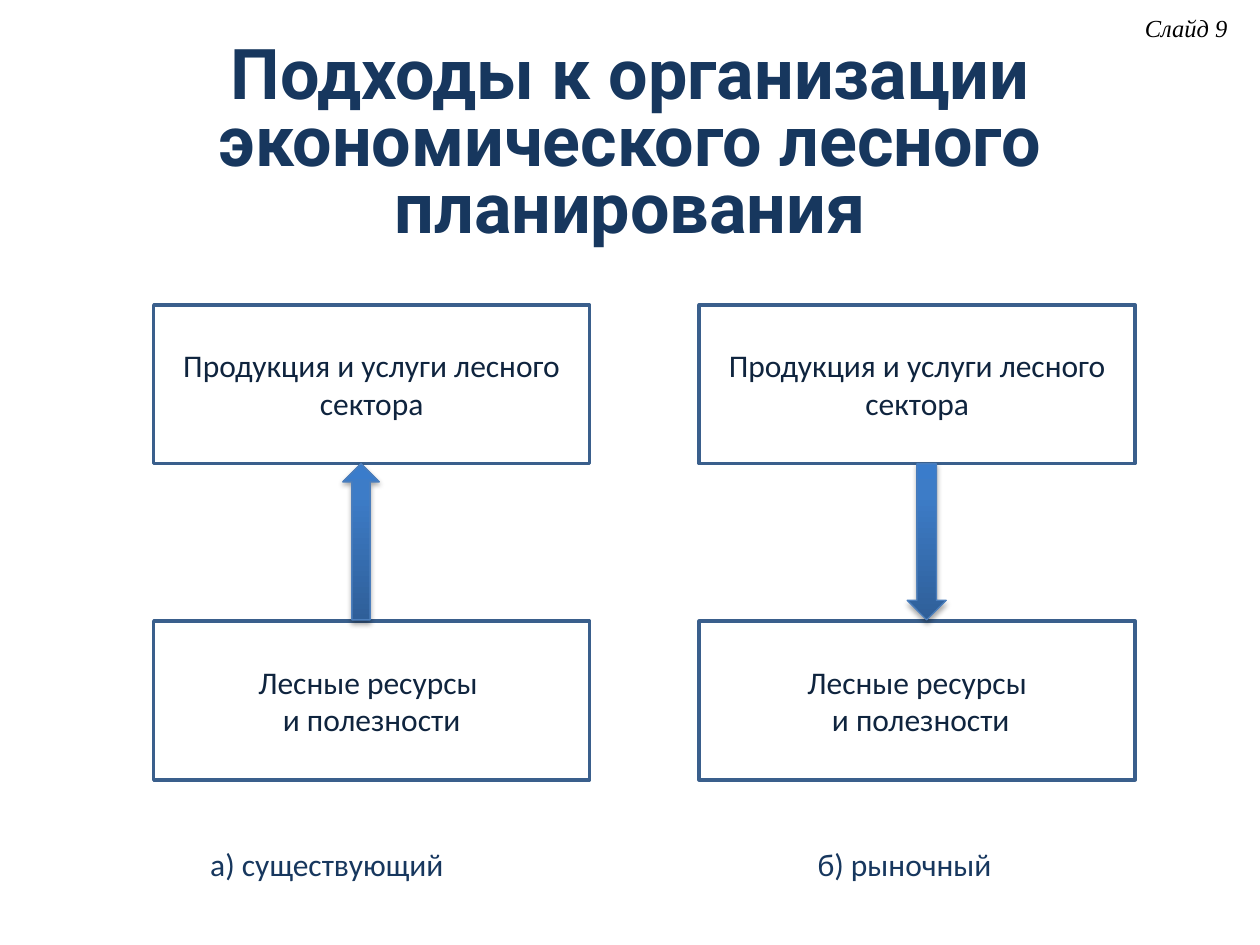
from copy import deepcopy

from lxml import etree
from pptx import Presentation
from pptx.dml.color import RGBColor
from pptx.enum import shapes, text
from pptx.oxml import ns
from pptx.util import Inches, Pt

NAVY = RGBColor(0x17, 0x37, 0x5E)
INK = RGBColor(0x0F, 0x24, 0x3E)
BLACK = RGBColor(0, 0, 0)
BOX_LINE = RGBColor(0x3A, 0x5F, 0x8C)
ARROW_LINE = RGBColor(0x4B, 0x7E, 0xBC)
ARROW_STOPS = [
    RGBColor(0x2F, 0x5F, 0x99),
    RGBColor(0x3D, 0x7C, 0xC7),
    RGBColor(0x3A, 0x7C, 0xCB),
]
BODY = {"name": "Calibri", "size": Pt(18)}


def write(shape, lines, color, align, **formats):
    frame = shape.text_frame
    frame.word_wrap = True
    frame.vertical_anchor = text.MSO_ANCHOR.MIDDLE
    frame.text = "\n".join(lines)
    for paragraph in frame.paragraphs:
        paragraph.alignment = align
        for run in paragraph.runs:
            run.font.color.rgb = color
            for key, value in formats.items():
                setattr(run.font, key, value)
    return frame


prs = Presentation()
prs.slide_width, prs.slide_height = Inches(10), Inches(7.5)
slide = prs.slides.add_slide(prs.slide_layouts[5])
CENTER = text.PP_ALIGN.CENTER

title = slide.shapes.title
title.left, title.top = Inches(0.5), Inches(0.3)
title.width, title.height = Inches(9), Inches(1.72)
heading = write(title, ["Подходы к организации экономического лесного планирования"],
                NAVY, CENTER, name="Roboto", size=Pt(40), bold=True)
heading.paragraphs[0].line_spacing = 0.8

slide_number = slide.shapes.add_textbox(Inches(8.83), 0, Inches(1.17), Inches(0.44))
write(slide_number, ["Слайд 9"], BLACK, CENTER,
      name="Times New Roman", size=Pt(14), italic=True).word_wrap = False

products = ["Продукция и услуги лесного сектора"]
approaches = [
    (1.22, ["Лесные ресурсы ", "и полезности"]),
    (5.55, ["Лесные ресурсы", " и полезности"]),
]
for left, resources in approaches:
    for top, lines in [(2.42, products), (4.93, resources)]:
        box = slide.shapes.add_shape(shapes.MSO_SHAPE.RECTANGLE, Inches(left),
                                     Inches(top), Inches(3.46), Inches(1.26))
        box.shadow.inherit = False
        box.fill.background()
        box.line.color.rgb = BOX_LINE
        box.line.width = Pt(2)
        write(box, lines, INK, CENTER, **BODY)

arrows = [
    (shapes.MSO_SHAPE.UP_ARROW, 2.72, 0.29),
    (shapes.MSO_SHAPE.DOWN_ARROW, 7.2, 0.31),
]
for direction, left, width in arrows:
    arrow = slide.shapes.add_shape(direction, Inches(left), Inches(3.68),
                                   Inches(width), Inches(1.24))
    arrow.line.color.rgb = ARROW_LINE
    arrow.line.width = Pt(0.75)
    arrow.fill.gradient()
    arrow.fill.gradient_angle = 90
    stop_list = arrow.element.spPr.find(".//" + ns.qn("a:gsLst"))
    stop_list.append(deepcopy(stop_list[-1]))
    for stop, position, color in zip(arrow.fill.gradient_stops, (0, 0.8, 1), ARROW_STOPS):
        stop.position = position
        stop.color.rgb = color
    arrow.shadow.inherit = False
    effects = arrow.element.spPr.find(ns.qn("a:effectLst"))
    shadow = etree.SubElement(effects, ns.qn("a:outerShdw"), blurRad=str(Pt(3.1)),
                              dist=str(Pt(1.8)), dir="5400000", rotWithShape="0")
    shade = etree.SubElement(shadow, ns.qn("a:srgbClr"), val="000000")
    etree.SubElement(shade, ns.qn("a:alpha"), val="35000")

for left, caption in [(1.57, "а) существующий"), (6.39, "б) рыночный")]:
    caption_box = slide.shapes.add_textbox(Inches(left), Inches(6.58),
                                           Inches(2.78), Inches(0.55))
    write(caption_box, [caption], NAVY, text.PP_ALIGN.LEFT, **BODY)

prs.save("out.pptx")
